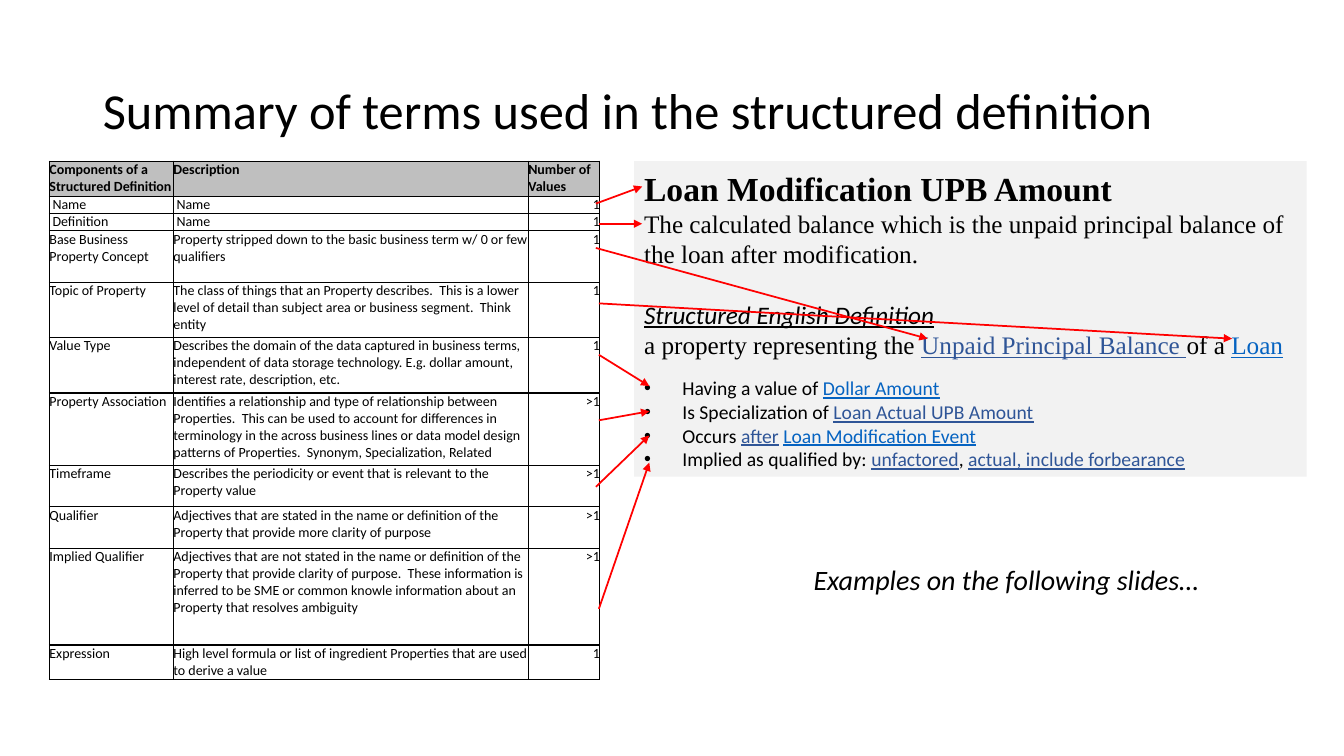
from dataclasses import dataclass

from lxml import etree
from pptx import Presentation
from pptx.dml.color import RGBColor
from pptx.enum.shapes import MSO_CONNECTOR, MSO_SHAPE
from pptx.enum.text import MSO_ANCHOR, MSO_AUTO_SIZE, PP_ALIGN
from pptx.oxml.ns import qn
from pptx.util import Emu, Pt

STRAIGHT = MSO_CONNECTOR.STRAIGHT
RECTANGLE = MSO_SHAPE.RECTANGLE
MIDDLE = MSO_ANCHOR.MIDDLE
GROW = MSO_AUTO_SIZE.SHAPE_TO_FIT_TEXT
NO_FIT = MSO_AUTO_SIZE.NONE
LEFT, RIGHT = PP_ALIGN.LEFT, PP_ALIGN.RIGHT

EMU_PER_PX = 9144  # 100 px to the inch
SANS, SERIF = "Calibri", "Times New Roman"
BLACK, RED = "000000", "FF0000"
HEADER_GREY, PANEL_GREY = "BFBFBF", "F2F2F2"
TERM_BLUE, LINK_BLUE = "2F5597", "0563C1"
LIST_INDENT = 38


@dataclass(frozen=True)
class TextRun:
    text: str
    size: int = 14
    font: str = SANS
    color: str = BLACK
    bold: bool = False
    italic: bool = False
    underline: bool = False


@dataclass(frozen=True)
class TableRow:
    height: int
    component: str
    description: str
    count: str


@dataclass(frozen=True)
class Arrow:
    x1: int
    y1: int
    x2: int
    y2: int


def term(text: str, color: str = TERM_BLUE, size: int = 14, font: str = SANS) -> TextRun:
    return TextRun(text, size, font, color, underline=True)


COLUMN_WIDTHS = (123, 352, 71)
ROWS = (
    TableRow(35, "Components of a Structured Definition", "Description", "Number of Values"),
    TableRow(17, " Name", " Name", "1"),
    TableRow(17, " Definition", " Name", "1"),
    TableRow(51, "Base Business Property Concept",
             "Property stripped down to the basic business term w/ 0 or few qualifiers", "1"),
    TableRow(55, "Topic of Property",
             "The class of things that an Property describes.  This is a lower level of detail "
             "than subject area or business segment.  Think  entity", "1"),
    TableRow(55, "Value Type",
             "Describes the domain of the data captured in business terms, independent of data "
             "storage technology. E.g. dollar amount, interest rate, description, etc.", "1"),
    TableRow(72, "Property Association",
             "Identifies a relationship and type of relationship between Properties.  This can be "
             "used to account for differences in terminology in the across business lines or data "
             "model design patterns of Properties.  Synonym, Specialization, Related", ">1"),
    TableRow(41, "Timeframe",
             "Describes the periodicity or event that is relevant to the Property value", ">1"),
    TableRow(41, "Qualifier",
             "Adjectives that are stated in the name or definition of the Property that provide "
             "more clarity of purpose", ">1"),
    TableRow(96, "Implied Qualifier",
             "Adjectives that are not stated in the name or definition of the Property that provide "
             "clarity of purpose.  These information is inferred to be SME or common knowle "
             "information about an Property that resolves ambiguity", ">1"),
    TableRow(34, "Expression",
             "High level formula or list of ingredient Properties that are used to derive a value",
             "1"),
)
TERM_NAME = TextRun("Loan Modification UPB Amount", 24, SERIF, bold=True)
TERM_DEFINITION = TextRun("The calculated balance which is the unpaid principal balance of "
                          "the loan after modification.", 18, SERIF)
STRUCTURED_HEADING = TextRun("Structured English Definition", 18, italic=True, underline=True)
STRUCTURED_DEFINITION = (
    TextRun("a property representing the ", 18, SERIF),
    term("Unpaid Principal Balance ", TERM_BLUE, 18, SERIF),
    TextRun("of a ", 18, SERIF),
    term("Loan", LINK_BLUE, 18, SERIF),
)
BULLETS = (
    (TextRun("Having a value of "), term("Dollar Amount", LINK_BLUE)),
    (TextRun("Is Specialization of "), term("Loan Actual UPB Amount")),
    (TextRun("Occurs "), term("after"), TextRun(" "),
     term("Loan Modification Event", LINK_BLUE)),
    (TextRun("Implied as qualified by: "), term("unfactored"), TextRun(", "),
     term("actual, include forbearance")),
)
ARROWS = (
    Arrow(591, 202, 637, 185),
    Arrow(594, 222, 637, 222),
    Arrow(591, 246, 920, 336),
    Arrow(594, 352, 644, 383),
    Arrow(594, 417, 644, 408),
    Arrow(591, 483, 644, 432),
    Arrow(594, 604, 644, 459),
    Arrow(594, 301, 1222, 336),
)


def px(length: int) -> Emu:
    return Emu(length * EMU_PER_PX)


def rgb(color: str) -> RGBColor:
    return RGBColor.from_string(color)


def add_runs(paragraph, *runs: TextRun) -> None:
    for item in runs:
        run = paragraph.add_run()
        run.text = item.text
        font = run.font
        font.name, font.size = item.font, Pt(item.size)
        font.bold, font.italic, font.underline = item.bold, item.italic, item.underline
        font.color.rgb = rgb(item.color)


def add_bullet(paragraph) -> None:
    properties = paragraph._p.get_or_add_pPr()
    properties.set("marL", str(px(LIST_INDENT)))
    properties.set("indent", str(-px(LIST_INDENT)))
    etree.SubElement(properties, qn("a:buFont"), typeface="Arial")
    etree.SubElement(properties, qn("a:buChar"), char="•")


def add_borders(cell) -> None:
    properties = cell._tc.get_or_add_tcPr()
    for side in ("lnL", "lnR", "lnT", "lnB"):
        line = etree.SubElement(properties, qn(f"a:{side}"), w=str(Pt(1)))
        fill = etree.SubElement(line, qn("a:solidFill"))
        etree.SubElement(fill, qn("a:srgbClr"), val=BLACK)


def add_title(slide) -> None:
    title = slide.shapes.title
    title.left, title.top, title.width, title.height = px(92), px(40), px(1150), px(145)
    frame = title.text_frame
    frame.auto_size = NO_FIT
    frame.vertical_anchor = MIDDLE
    paragraph = frame.paragraphs[0]
    paragraph.alignment = LEFT
    paragraph.line_spacing = 0.9
    add_runs(paragraph, TextRun("Summary of terms used in the structured definition", 36))


def add_component_table(slide) -> None:
    height = sum(row.height for row in ROWS)
    table = slide.shapes.add_table(len(ROWS), len(COLUMN_WIDTHS), px(49), px(160),
                                   px(sum(COLUMN_WIDTHS)), px(height)).table
    table.first_row = table.horz_banding = False
    for column, width in zip(table.columns, COLUMN_WIDTHS):
        column.width = px(width)
    for row_index, row in enumerate(ROWS):
        is_header = row_index == 0
        table.rows[row_index].height = px(row.height)
        for column_index, text in enumerate((row.component, row.description, row.count)):
            cell = table.cell(row_index, column_index)
            cell.margin_left = cell.margin_right = cell.margin_top = cell.margin_bottom = 0
            add_borders(cell)
            if is_header:
                cell.fill.solid()
                cell.fill.fore_color.rgb = rgb(HEADER_GREY)
            else:
                cell.fill.background()
            paragraph = cell.text_frame.paragraphs[0]
            paragraph.alignment = RIGHT if column_index == 2 and not is_header else LEFT
            add_runs(paragraph, TextRun(text, 10, bold=is_header))


def add_definition_panel(slide) -> None:
    panel = slide.shapes.add_shape(RECTANGLE, px(629), px(160), px(667), px(313))
    panel.shadow.inherit = False
    panel.fill.solid()
    panel.fill.fore_color.rgb = rgb(PANEL_GREY)
    panel.line.fill.background()
    frame = panel.text_frame
    frame.word_wrap = True
    frame.auto_size = GROW
    frame.vertical_anchor = MIDDLE
    name = frame.paragraphs[0]
    add_runs(name, TERM_NAME)
    definition = frame.add_paragraph()
    definition.space_after = Pt(22)
    add_runs(definition, TERM_DEFINITION)
    structured = frame.add_paragraph()
    structured.space_after = Pt(12)
    add_runs(structured, STRUCTURED_HEADING)
    structured.add_line_break()
    add_runs(structured, *STRUCTURED_DEFINITION)
    for runs in BULLETS:
        paragraph = frame.add_paragraph()
        add_bullet(paragraph)
        add_runs(paragraph, *runs)
    for paragraph in frame.paragraphs:
        paragraph.alignment = LEFT


def add_arrow(slide, arrow: Arrow) -> None:
    connector = slide.shapes.add_connector(STRAIGHT, px(arrow.x1), px(arrow.y1),
                                           px(arrow.x2), px(arrow.y2))
    connector.line.color.rgb = rgb(RED)
    connector.line.width = Pt(1.25)
    etree.SubElement(connector.line._get_or_add_ln(), qn("a:tailEnd"), type="triangle")
    etree.SubElement(connector._element.spPr, qn("a:effectLst"))


def add_closing_note(slide) -> None:
    frame = slide.shapes.add_textbox(px(797), px(553), px(405), px(44)).text_frame
    frame.word_wrap = False
    frame.auto_size = GROW
    add_runs(frame.paragraphs[0], TextRun("Examples on the following slides…", 20, italic=True))


def main() -> None:
    presentation = Presentation()
    presentation.slide_width, presentation.slide_height = px(1333), px(750)
    slide = presentation.slides.add_slide(presentation.slide_layouts.get_by_name("Title Only"))
    add_title(slide)
    add_component_table(slide)
    add_definition_panel(slide)
    for arrow in ARROWS:
        add_arrow(slide, arrow)
    add_closing_note(slide)
    presentation.save("out.pptx")


if __name__ == "__main__":
    main()
